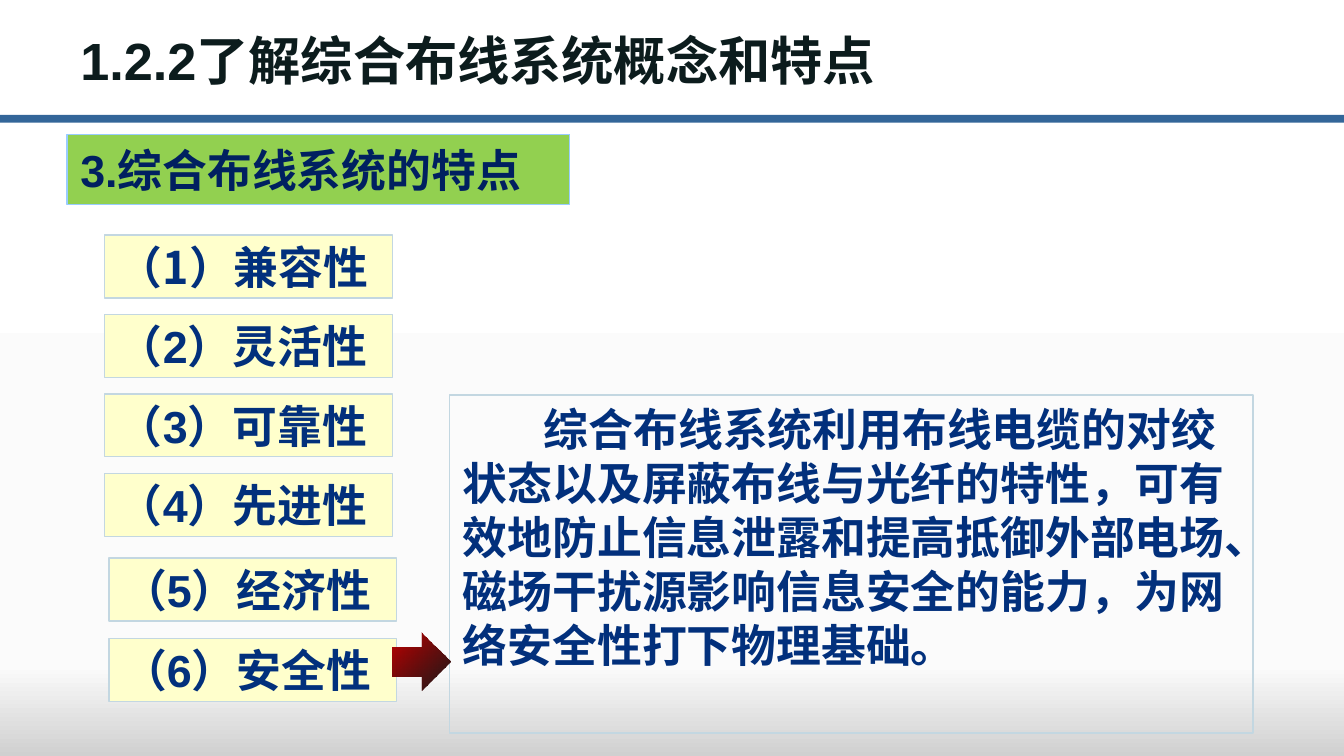
from lxml import etree
from pptx import Presentation
from pptx.dml.color import RGBColor
from pptx.enum.shapes import MSO_SHAPE
from pptx.enum.text import MSO_ANCHOR, PP_ALIGN
from pptx.oxml.ns import qn
from pptx.util import Cm, Pt

RECTANGLE = MSO_SHAPE.RECTANGLE
ARROW = MSO_SHAPE.RIGHT_ARROW
TOP, MIDDLE = MSO_ANCHOR.TOP, MSO_ANCHOR.MIDDLE
LEFT = PP_ALIGN.LEFT

LATIN, CHINESE = "Arial", "Noto Sans CJK SC"
COLORS = {
    "bar": "336699", "title": "0C1C1D", "heading": "002060",
    "heading_fill": "92D050", "heading_line": "99CCFF",
    "text": "02307C", "item_fill": "FFFFCC", "border": "C3D7E1",
    "white": "FFFFFF", "pale": "FBFBFB", "gray": "D0D0D0",
    "red": "C00000", "black": "000000",
}

TITLE = "1.2.2了解综合布线系统概念和特点"
HEADING = "3.综合布线系统的特点"
FEATURE_GROUPS = [
    {"left": 1.98, "top": 4.44, "pitch": 1.5,
     "items": [("（1）兼容性", CHINESE), ("（2）灵活性", LATIN),
               ("（3）可靠性", LATIN), ("（4）先进性", LATIN)]},
    {"left": 2.06, "top": 10.54, "pitch": 1.52,
     "items": [("（5）经济性", LATIN), ("（6）安全性", LATIN)]},
]
EXPLANATION = (
    "综合布线系统利用布线电缆的对绞状态以及屏蔽布线与光纤的特性，"
    "可有效地防止信息泄露和提高抵御外部电场、磁场干扰源影响信息安全的能力，"
    "为网络安全性打下物理基础。"
)
BACKDROP_STOPS = [(0, "white", 100), (88, "pale", 100), (100, "gray", 100)]
ARROW_STOPS = [(0, "red", 100), (100, "black", 90)]


def rgb(name):
    return RGBColor.from_string(COLORS[name])


def set_gradient(fill, host, stops, angle):
    fill.solid()
    solid = host.find(".//" + qn("a:solidFill"))
    gradient = etree.Element(qn("a:gradFill"), rotWithShape="1")
    stop_list = etree.SubElement(gradient, qn("a:gsLst"))
    for position, name, opacity in stops:
        stop = etree.SubElement(stop_list, qn("a:gs"), pos=str(position * 1000))
        color = etree.SubElement(stop, qn("a:srgbClr"), val=COLORS[name])
        if opacity < 100:
            etree.SubElement(color, qn("a:alpha"), val=str(opacity * 1000))
    etree.SubElement(gradient, qn("a:lin"), ang=str(angle * 60000), scaled="0")
    solid.getparent().replace(solid, gradient)


def add_box(page, left, top, width, height, kind=RECTANGLE, fill=None, line=None):
    box = page.shapes.add_shape(kind, Cm(left), Cm(top), Cm(width), Cm(height))
    box.shadow.inherit = False
    if fill:
        box.fill.solid()
        box.fill.fore_color.rgb = rgb(fill)
    else:
        box.fill.background()
    if line:
        box.line.color.rgb = rgb(line)
        box.line.width = Pt(0.75)
    else:
        box.line.fill.background()
    return box


def write(box, text, size=24, color="text", font=LATIN, anchor=MIDDLE,
          wrap=True, indent=0, spacing=None):
    frame = box.text_frame
    frame.word_wrap = wrap
    frame.vertical_anchor = anchor
    para = frame.paragraphs[0]
    para.alignment = LEFT
    if spacing:
        para.line_spacing = Pt(spacing)
    if indent:
        para._p.get_or_add_pPr().set("indent", str(Cm(indent)))
    span = para.add_run()
    span.text = text
    span.font.size = Pt(size)
    span.font.bold = True
    span.font.color.rgb = rgb(color)
    span.font.name = font
    etree.SubElement(span.font._element, qn("a:ea"), typeface=CHINESE)


def main():
    deck = Presentation()
    deck.slide_width, deck.slide_height = Cm(25.4), Cm(14.28)
    page = deck.slides.add_slide(deck.slide_layouts[6])
    set_gradient(page.background.fill, page.element, BACKDROP_STOPS, 90)

    add_box(page, 0, 2.17, 25.4, 0.15, fill="bar")
    title = page.shapes.add_textbox(Cm(1.27), Cm(0.23), Cm(22.68), Cm(1.78))
    write(title, TITLE, size=28, color="title")

    for group in FEATURE_GROUPS:
        for row, (text, font) in enumerate(group["items"]):
            item = add_box(page, group["left"], group["top"] + row * group["pitch"],
                           5.44, 1.19, fill="item_fill", line="border")
            write(item, text, font=font, wrap=False)

    heading = add_box(page, 1.27, 2.54, 9.5, 1.32,
                      fill="heading_fill", line="heading_line")
    write(heading, HEADING, color="heading")

    explanation = add_box(page, 8.5, 7.46, 15.18, 6.39, line="border")
    write(explanation, EXPLANATION, anchor=TOP, indent=1.53, spacing=28.9)

    arrow = add_box(page, 7.41, 11.95, 1.1, 1.1, kind=ARROW)
    set_gradient(arrow.fill, arrow.element.spPr, ARROW_STOPS, 45)

    deck.save("out.pptx")


if __name__ == "__main__":
    main()
